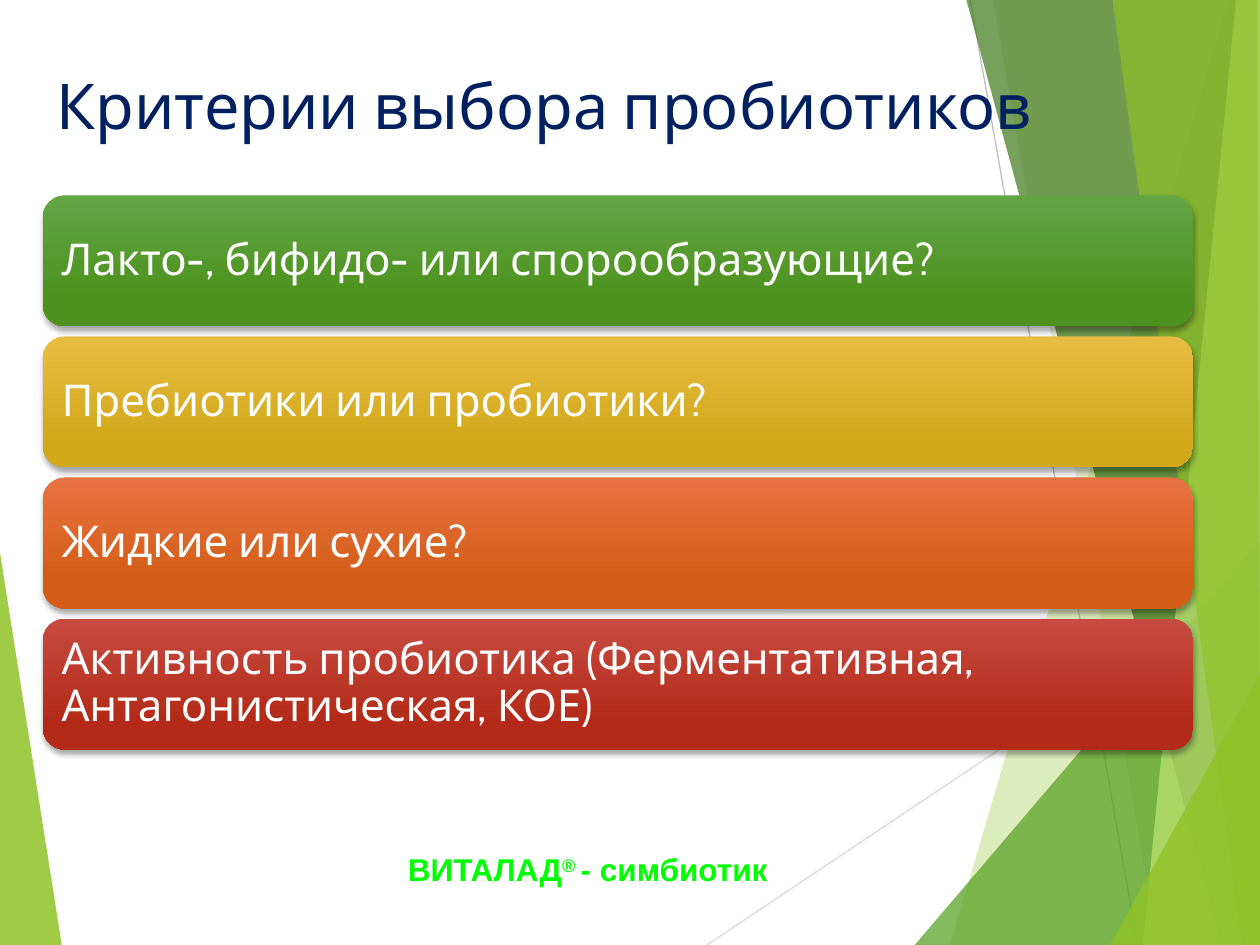
from lxml.etree import SubElement
from pptx import Presentation
from pptx.dml.color import RGBColor
from pptx.enum.shapes import MSO_CONNECTOR, MSO_SHAPE
from pptx.enum.text import MSO_ANCHOR, PP_ALIGN
from pptx.oxml.ns import qn
from pptx.util import Inches, Pt

COLORS = {
    "lime": "90C226", "green": "54A021", "dark green": "3F7819", "pale lime": "C0E474",
    "light gray": "D9D9D9", "gray": "BFBFBF",
    "navy": "002060", "white": "FFFFFF", "bright green": "00FF00",
}

presentation = Presentation()
presentation.slide_width = Inches(10)
presentation.slide_height = Inches(7.5)
slide = presentation.slides.add_slide(presentation.slide_layouts[6])


def place(x, y):
    """Turn percentages of the slide's width and height into lengths."""
    return (round(presentation.slide_width * x / 100),
            round(presentation.slide_height * y / 100))


def add_text(paragraph, text, *, size, font, color, bold=False, baseline=None):
    run = paragraph.add_run()
    run.text = text
    run.font.size = Pt(size)
    run.font.name = font
    run.font.bold = bold
    run.font.color.rgb = RGBColor.from_string(COLORS[color])
    if baseline:
        run.font._element.set("baseline", str(baseline * 1000))


# Background: left wedge, thin lines, then the facets on the right
left_wedge = [("lime", 85, [(0, 58.5), (4.9, 100), (0, 100)])]
right_facets = [
    ("lime", 30, [(97.5, 0), (75.4, 100), (100, 100), (100, 0)]),
    ("lime", 20, [(78.8, 0), (91.9, 100), (100, 100), (100, 0)]),
    ("green", 72, [(72.6, 100), (100, 57.2), (100, 100)]),
    ("dark green", 70, [(76.7, 0), (97, 100), (100, 100), (100, 0)]),
    ("pale lime", 70, [(98.1, 0), (90.7, 100), (100, 100), (100, 0)]),
    ("lime", 65, [(88.3, 0), (98.6, 100), (100, 100), (99.8, 0)]),
    ("lime", 80, [(88.1, 100), (100, 71.3), (100, 100)]),
]
thin_lines = [
    ("light gray", (56.1, 100), (100, 60.9)),
    ("gray", (77, 0), (90.3, 100)),
]

for color, start, end in thin_lines:
    line = slide.shapes.add_connector(MSO_CONNECTOR.STRAIGHT, *place(*start), *place(*end))
    line.line.color.rgb = RGBColor.from_string(COLORS[color])
    line.line.width = Pt(0.75)
    SubElement(line._element.spPr, qn("a:effectLst"))

for color, opacity, points in left_wedge + right_facets:
    corners = [place(*point) for point in points]
    builder = slide.shapes.build_freeform(*corners[0])
    builder.add_line_segments(corners[1:], close=True)
    facet = builder.convert_to_shape()
    facet.shadow.inherit = False
    facet.line.fill.background()
    facet.fill.solid()
    facet.fill.fore_color.rgb = RGBColor.from_string(COLORS[color])
    color_element = facet._element.spPr.find(".//" + qn("a:srgbClr"))
    SubElement(color_element, qn("a:alpha"), val=str(opacity * 1000))

# Title
title = slide.shapes.add_textbox(*place(3.5, 6.4), *place(79.8, 19.2))
title.text_frame.word_wrap = True
add_text(title.text_frame.paragraphs[0], "Критерии выбора пробиотиков",
         size=36, font="Cabin", color="navy")

# Criteria bars: text, top colour, bottom colour
criteria = [
    ("Лакто-, бифидо- или спорообразующие?", "63A545", "4D921E"),
    ("Пребиотики или пробиотики?", "E7BC43", "D2A91B"),
    ("Жидкие или сухие?", "E87242", "D35D16"),
    ("Активность пробиотика (Ферментативная, Антагонистическая, КОЕ)", "C74B42", "B32B18"),
]
first_top, row_pitch, bar_height = 20.67, 14.93, 13.87

for row, (text, top_color, bottom_color) in enumerate(criteria):
    bar = slide.shapes.add_shape(MSO_SHAPE.ROUNDED_RECTANGLE,
                                 *place(3.4, first_top + row * row_pitch),
                                 *place(91.3, bar_height))
    bar.line.fill.background()
    bar.fill.gradient()
    bar.fill.gradient_angle = 270
    stops = zip(bar.fill.gradient_stops, (0, 0.78), (top_color, bottom_color))
    for stop, position, color in stops:
        stop.position = position
        stop.color.rgb = RGBColor.from_string(color)

    # Soft shadow straight below the bar
    bar.shadow.inherit = False
    effects = bar._element.spPr.find(qn("a:effectLst"))
    shadow = SubElement(effects, qn("a:outerShdw"), blurRad=str(Pt(3)), dist=str(Pt(2)),
                        dir="5400000", rotWithShape="0")
    shadow_color = SubElement(shadow, qn("a:srgbClr"), val="000000")
    SubElement(shadow_color, qn("a:alpha"), val="35000")

    frame = bar.text_frame
    frame.word_wrap = True
    frame.vertical_anchor = MSO_ANCHOR.MIDDLE
    frame.margin_left = frame.margin_right = Inches(0.1)
    frame.margin_top = frame.margin_bottom = Inches(0.1)
    paragraph = frame.paragraphs[0]
    paragraph.alignment = PP_ALIGN.LEFT
    paragraph.line_spacing = 0.9
    add_text(paragraph, text, size=25, font="Cabin", color="white")

# Product line at the foot
footer = slide.shapes.add_textbox(*place(29.6, 89.33), *place(34.1, 5.33))
footer.text_frame.word_wrap = False
paragraph = footer.text_frame.paragraphs[0]
paragraph.alignment = PP_ALIGN.CENTER
for text, baseline in [("ВИТАЛАД", None), ("® ", 30), ("- симбиотик", None)]:
    add_text(paragraph, text, size=18, font="Arial", color="bright green",
             bold=True, baseline=baseline)

presentation.save("out.pptx")
